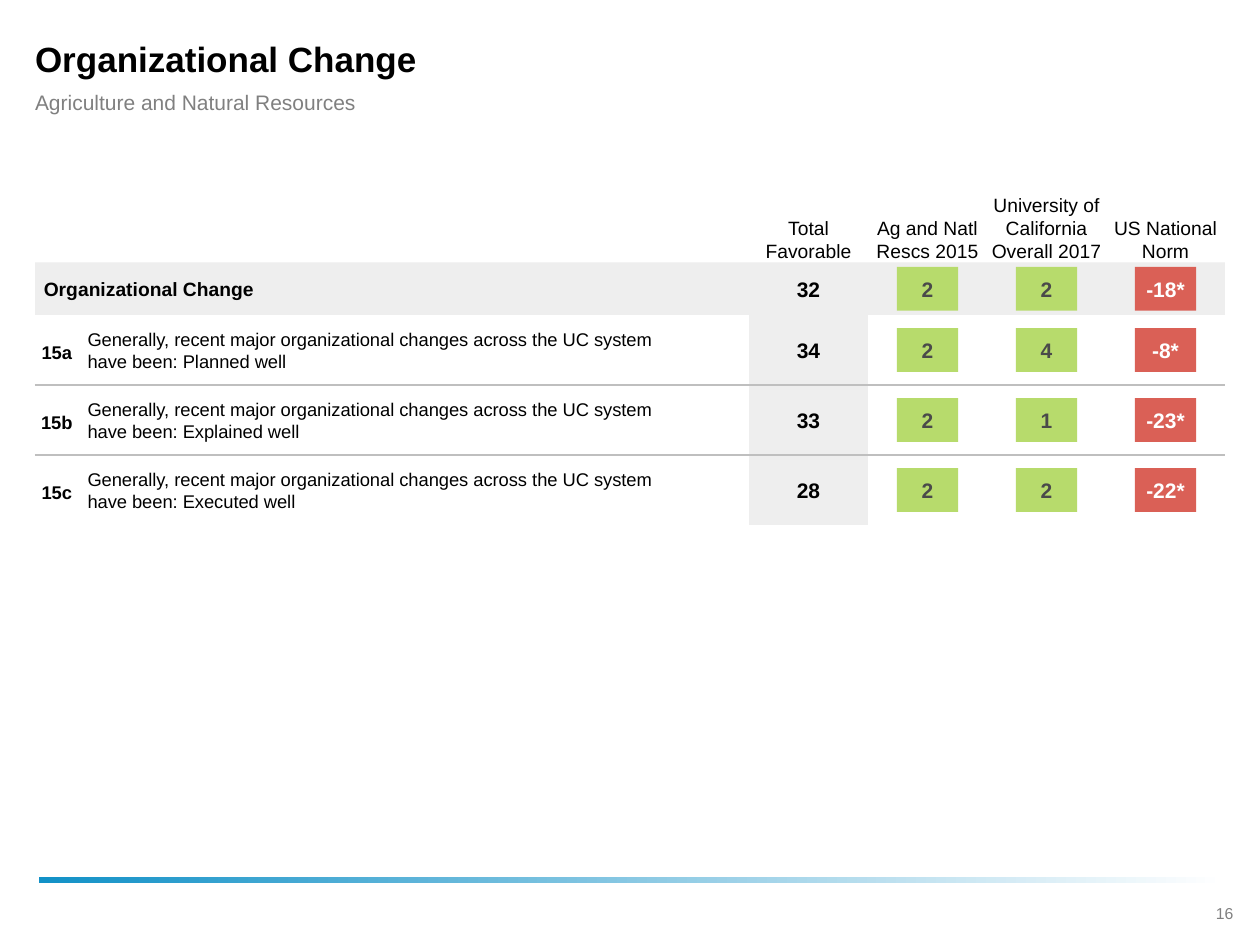
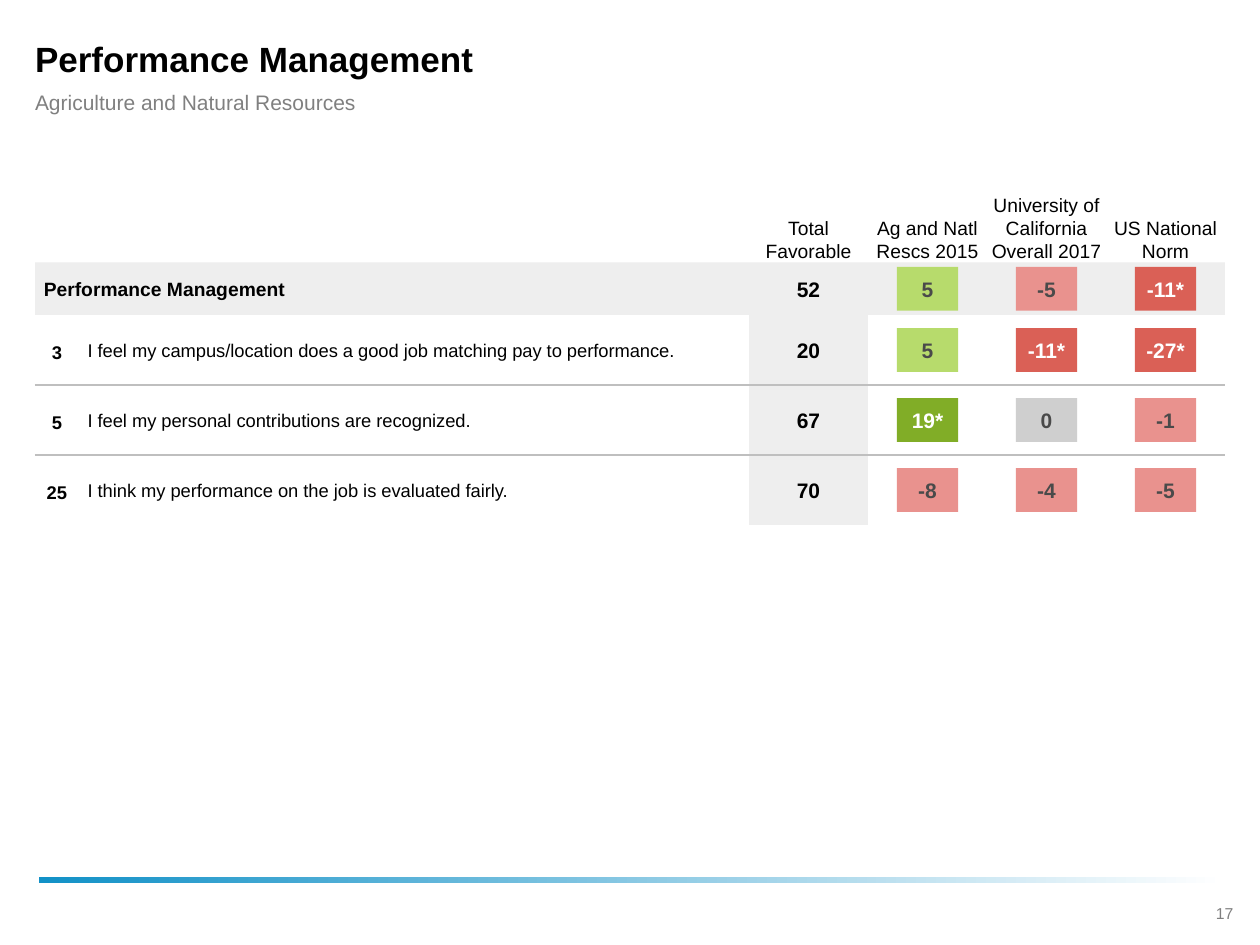
from pptx import Presentation
from pptx.dml.color import RGBColor
from pptx.enum.shapes import MSO_CONNECTOR, MSO_SHAPE
from pptx.enum.text import MSO_ANCHOR as ANCHOR, MSO_AUTO_SIZE, PP_ALIGN as ALIGN
from pptx.oxml.ns import qn
from pptx.util import Pt
from lxml import etree

FONT = "Arial"
BLACK, WHITE, DARK, GREY = "000000", "FFFFFF", "4A4A4A", "808080"
BAND, RULE, BLUE = "EEEEEE", "BFBFBF", "1291C7"
GREEN, STRONG_GREEN = "B7DB6C", "81AD27"
RED, STRONG_RED, NEUTRAL = "E9928E", "DA6056", "CFCFCF"

LEFT, WIDTH = 20, 680
COL_LEFT, COL_W = 428, 68
HEAD_TOP, HEAD_H, ROW_H = 150, 30, 40
CHIP_W, CHIP_H = 35, 25

SUBTITLE = "Agriculture and Natural Resources"
COLUMNS = ["Total Favorable", "Ag and Natl Rescs 2015",
           "University of California Overall 2017", "US National Norm"]
CHANGES = "Generally, recent major organizational changes across the UC system have been: "

# Each page: number, title, then rows of (item number, wording, scores)
PAGES = [
    (16, "Organizational Change", [
        ("", "Organizational Change", ["32", "2", "2", "-18*"]),
        ("15a", CHANGES + "Planned well", ["34", "2", "4", "-8*"]),
        ("15b", CHANGES + "Explained well", ["33", "2", "1", "-23*"]),
        ("15c", CHANGES + "Executed well", ["28", "2", "2", "-22*"]),
    ]),
    (17, "Performance Management", [
        ("", "Performance Management", ["52", "5", "-5", "-11*"]),
        ("3", "I feel my campus/location does a good job matching pay to performance.",
         ["20", "5", "-11*", "-27*"]),
        ("5", "I feel my personal contributions are recognized.",
         ["67", "19*", "0", "-1"]),
        ("25", "I think my performance on the job is evaluated fairly.",
         ["70", "-8", "-4", "-5"]),
    ]),
]


def rgb(value):
    return RGBColor.from_string(value)


def add_box(s, x, y, w, h, text="", size=12, color=BLACK, bold=False, align=ALIGN.CENTER,
            anchor=ANCHOR.MIDDLE, left=0, right=0, fill=None):
    """Add a text box, or a filled rectangle when a fill is given; measures in points."""
    frame = Pt(x), Pt(y), Pt(w), Pt(h)
    if fill:
        sp = s.shapes.add_shape(MSO_SHAPE.RECTANGLE, *frame)
        sp.shadow.inherit = False
        sp.fill.solid()
        sp.fill.fore_color.rgb = rgb(fill)
        sp.line.fill.background()
    else:
        sp = s.shapes.add_textbox(*frame)
    if text:
        tf = sp.text_frame
        tf.word_wrap = True
        tf.vertical_anchor = anchor
        tf.margin_left, tf.margin_right = Pt(left), Pt(right)
        tf.margin_top = tf.margin_bottom = 0
        p = tf.paragraphs[0]
        p.text, p.alignment = text, align
        p.font.name, p.font.size, p.font.bold = FONT, Pt(size), bold
        p.font.color.rgb = rgb(color)
    return sp


prs = Presentation()
prs.slide_width, prs.slide_height = Pt(720), Pt(540)

for number, title, rows in PAGES:
    s = prs.slides.add_slide(prs.slide_layouts.get_by_name("Title Only"))

    # Title, subtitle and footer
    sp = s.shapes.title
    sp.left, sp.top, sp.width, sp.height = Pt(LEFT), Pt(20), Pt(WIDTH), Pt(27)
    tf = sp.text_frame
    tf.text = title
    tf.auto_size = MSO_AUTO_SIZE.NONE
    tf.vertical_anchor = ANCHOR.MIDDLE
    tf.margin_left = tf.margin_top = tf.margin_bottom = 0
    tf.margin_right = Pt(25)
    p = tf.paragraphs[0]
    p.alignment = ALIGN.LEFT
    p.font.name, p.font.size, p.font.bold = FONT, Pt(20), True
    p.font.color.rgb = rgb(BLACK)
    add_box(s, LEFT, 51, WIDTH, 15, SUBTITLE, color=GREY, align=ALIGN.LEFT, right=25)

    bar = add_box(s, 22.3, 501.1, 678, 3.5, fill=BLUE)
    bar.fill.gradient()
    bar.fill.gradient_angle = 0
    for stop, color in zip(bar.fill.gradient_stops, (BLUE, WHITE)):
        stop.color.rgb = rgb(color)
    add_box(s, 681, 512.6, 37.5, 18, str(number), 9, GREY)

    # Column headings and grey bands
    for i, heading in enumerate(COLUMNS):
        add_box(s, COL_LEFT + i * COL_W, 70, COL_W, 80, heading, 11, anchor=ANCHOR.BOTTOM)
    add_box(s, LEFT, HEAD_TOP, WIDTH, HEAD_H, fill=BAND)
    add_box(s, COL_LEFT, HEAD_TOP + HEAD_H, COL_W, ROW_H * (len(rows) - 1), fill=BAND)

    y = HEAD_TOP
    for i, (item, wording, (total, *gaps)) in enumerate(rows):
        if i == 0:
            h = HEAD_H
            add_box(s, LEFT, y, 408, h, wording, 11, bold=True, align=ALIGN.LEFT,
                    left=5, right=5)
        else:
            h = ROW_H
            add_box(s, LEFT, y + 1, 25, h, item, 10.5, bold=True)
            add_box(s, 45, y, 367, h, wording, 10.5, align=ALIGN.LEFT, left=5, right=25)
        add_box(s, COL_LEFT, y, COL_W, h, total, bold=True)

        # A star marks a significant gap, shown in the stronger colour
        for j, gap in enumerate(gaps, 1):
            strong = gap.endswith("*")
            if gap == "0":
                fill = NEUTRAL
            elif gap.startswith("-"):
                fill = STRONG_RED if strong else RED
            else:
                fill = STRONG_GREEN if strong else GREEN
            add_box(s, COL_LEFT + j * COL_W + (COL_W - CHIP_W) / 2, y + (h - CHIP_H) / 2,
                    CHIP_W, CHIP_H, gap, color=WHITE if strong else DARK, bold=True, fill=fill)

        y += h
        if 0 < i < len(rows) - 1:
            rule = s.shapes.add_connector(MSO_CONNECTOR.STRAIGHT, Pt(LEFT), Pt(y),
                                          Pt(LEFT + WIDTH), Pt(y))
            rule.line.color.rgb = rgb(RULE)
            rule.line.width = Pt(0.75)
            etree.SubElement(rule._element.spPr, qn("a:effectLst"))

prs.save("out.pptx")
